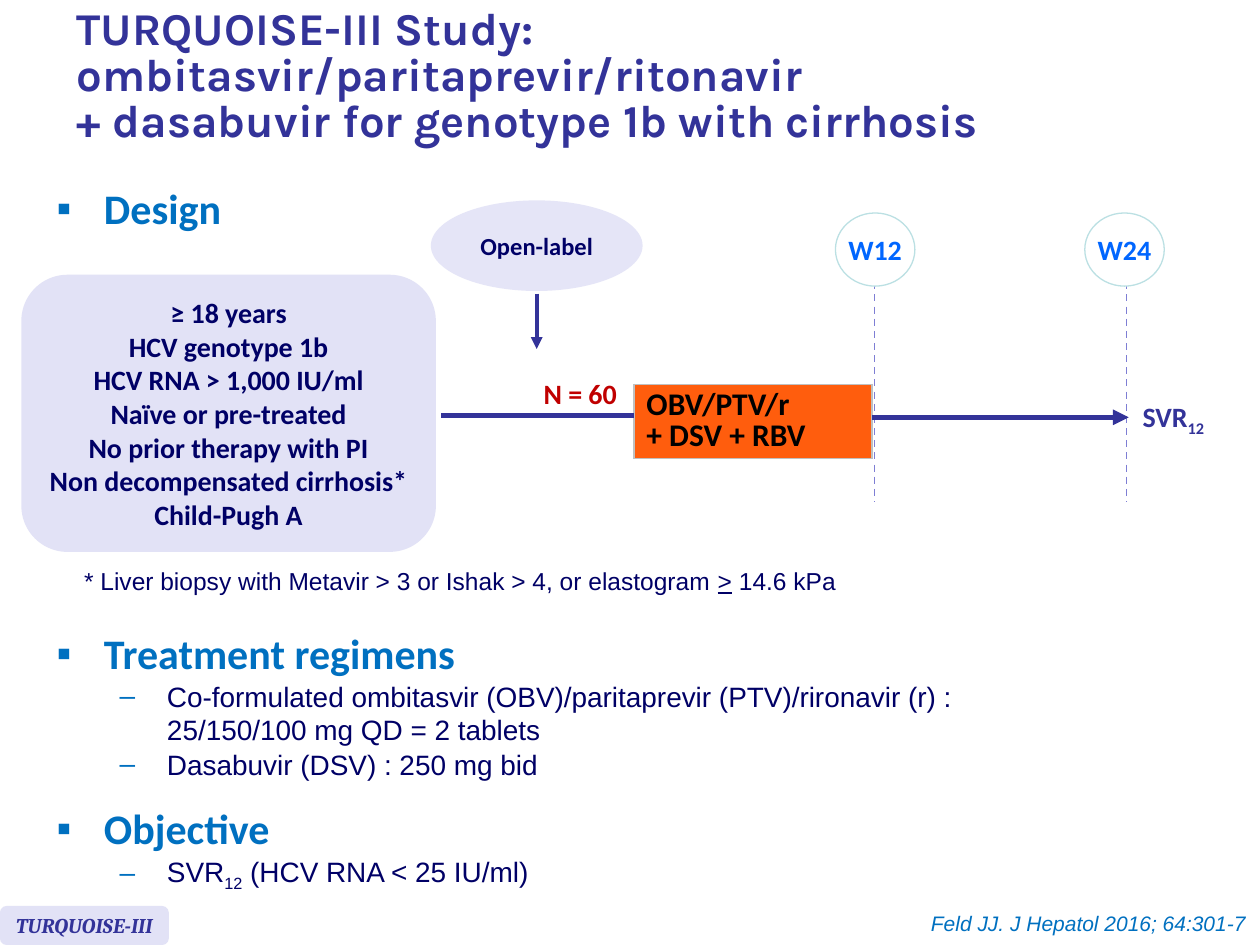
from lxml.etree import SubElement
from pptx import Presentation
from pptx.dml.color import RGBColor
from pptx.enum.dml import MSO_LINE
from pptx.enum.shapes import MSO_CONNECTOR, MSO_SHAPE
from pptx.enum.text import MSO_ANCHOR, MSO_AUTO_SIZE, PP_ALIGN
from pptx.oxml.ns import qn
from pptx.util import Pt

HEX = {
    "indigo": "333399", "navy": "000066", "blue": "0070C0", "week": "0066FF",
    "red": "C00000", "orange": "FF5D0D", "black": "000000", "white": "FFFFFF",
    "pale": "E2E2F6", "lilac": "E5E5F7", "dash": "7E7ED4", "aqua": "BBE0E3",
    "gray": "C0C0C0",
}
RGB = {name: RGBColor.from_string(code) for name, code in HEX.items()}
LEFT, MID, RIGHT = PP_ALIGN.LEFT, PP_ALIGN.CENTER, PP_ALIGN.RIGHT


def write(frame, *paras, font="Calibri", size=16, color="navy", bold=False,
          italic=False, align=LEFT, space=None, bullet=None, level=0):
    """Append paragraphs; each is a string or a list of (text, mark) runs."""
    for para in paras:
        p = frame.paragraphs[0]
        first = not p.text
        if not first:
            p = frame.add_paragraph()
        p.alignment = align
        p.level = level
        p.line_spacing = space
        p.space_before = Pt(0 if first or not bullet else 0.7)
        if bullet:
            props = p._p.get_or_add_pPr()
            props.set("marL", str(Pt(27 + 36 * level)))
            props.set("indent", str(Pt(-27)))
            tint = SubElement(props, qn("a:buClr"))
            SubElement(tint, qn("a:srgbClr"), val=HEX["blue"])
            SubElement(props, qn("a:buFont"), typeface="Arial")
            SubElement(props, qn("a:buChar"), char=bullet)
        for text, mark in [(para, None)] if isinstance(para, str) else para:
            for i, part in enumerate(text.split("\n")):
                if i:
                    p.add_line_break()
                run = p.add_run()
                run.text = part
                run.font.name, run.font.size = font, Pt(size)
                run.font.bold, run.font.italic = bold, italic
                run.font.color.rgb = RGB[color]
                if mark == "line":
                    run.font.underline = True
                elif mark == "sub":
                    run._r.get_or_add_rPr().set("baseline", "-25000")


deck = Presentation()
deck.slide_width, deck.slide_height = Pt(720), Pt(540)
slide = deck.slides.add_slide(deck.slide_layouts[4])
shapes = slide.shapes
holders = {h.placeholder_format.idx: h for h in slide.placeholders}

# Title
title = shapes.title
title.left, title.top, title.width, title.height = Pt(36.7), Pt(5.8), Pt(683.3), Pt(77)
frame = title.text_frame
frame.auto_size = MSO_AUTO_SIZE.NONE
frame.vertical_anchor = MSO_ANCHOR.MIDDLE
frame.margin_right = Pt(70)
write(frame, "TURQUOISE-III Study: ombitasvir/paritaprevir/ritonavir\n"
      "+ dasabuvir for genotype 1b with cirrhosis",
      font="Karla", size=26, color="indigo", bold=True, space=0.85)

# Lists
lists = [
    (1, 100.8, 142.6, 45.4, "Design", []),
    (2, 355, 700, 89.3, "Treatment regimens", [
        "Co-formulated ombitasvir (OBV)/paritaprevir (PTV)/rironavir (r) :\n"
        "25/150/100 mg QD = 2 tablets",
        "Dasabuvir (DSV) : 250 mg bid"]),
    (4, 455, 700, 64.8, "Objective", [
        [("SVR", None), ("12", "sub"), (" (HCV RNA < 25 IU/ml)", None)]]),
]
for idx, top, wide, high, head, items in lists:
    body = holders[idx]
    body.left, body.top, body.width, body.height = Pt(25.2), Pt(top), Pt(wide), Pt(high)
    frame = body.text_frame
    frame.auto_size = MSO_AUTO_SIZE.NONE
    frame.vertical_anchor = MSO_ANCHOR.TOP
    write(frame, head, size=24, color="blue", bold=True, bullet="▪")
    write(frame, *items, font="Arial", bullet="–", level=1)
spare = holders[3]._element
spare.getparent().remove(spare)

# Treatment arm
grid = shapes.add_table(1, 1, Pt(362.2), Pt(219.6), Pt(136), Pt(41.8)).table
grid.first_row = grid.horz_banding = False
cell = grid.cell(0, 0)
cell.vertical_anchor = MSO_ANCHOR.MIDDLE
write(cell.text_frame, "OBV/PTV/r\n+ DSV + RBV", size=18, color="black",
      bold=True, space=0.8)
for side in ("lnL", "lnR", "lnT", "lnB"):
    edge = SubElement(cell._tc.get_or_add_tcPr(), qn("a:" + side), w=str(Pt(1)))
    ink = SubElement(edge, qn("a:solidFill"))
    SubElement(ink, qn("a:srgbClr"), val=HEX["gray"])
cell.fill.solid()
cell.fill.fore_color.rgb = RGB["orange"]

# Lines and arrows: x1, y1, x2, y2, colour, width, arrow
lines = [
    (306.7, 167.8, 306.7, 199.4, "indigo", 2.25, True),
    (252, 237.6, 362.2, 237.6, "indigo", 3, False),
    (643.7, 161.3, 643.7, 287, "dash", 1, False),
    (499.7, 161.3, 499.7, 287, "dash", 1, False),
    (498.2, 238.5, 645, 238.5, "indigo", 3, True),
]
for x1, y1, x2, y2, color, wide, arrow in lines:
    link = shapes.add_connector(MSO_CONNECTOR.STRAIGHT, Pt(x1), Pt(y1), Pt(x2), Pt(y2))
    link.line.color.rgb = RGB[color]
    link.line.width = Pt(wide)
    if color == "dash":
        link.line.dash_style = MSO_LINE.DASH
    if arrow:
        SubElement(link.line._get_or_add_ln(), qn("a:tailEnd"), type="triangle")
    SubElement(link._element.spPr, qn("a:effectLst"))

# Filled shapes
OVAL, ROUND = MSO_SHAPE.OVAL, MSO_SHAPE.ROUNDED_RECTANGLE
bold = {"bold": True, "align": MID}
week = {**bold, "color": "week"}
tag = {**bold, "font": "Cambria", "size": 12, "color": "indigo", "italic": True}
needs = ["≥ 18 years", "HCV genotype 1b", "HCV RNA > 1,000 IU/ml",
         "Naïve or pre-treated", "No prior therapy with PI",
         "Non decompensated cirrhosis*", "Child-Pugh A"]
forms = [
    (OVAL, 246.2, 114.5, 121, 51.8, "lilac", None, ["Open-label"], {**bold, "size": 14}),
    (ROUND, 12.2, 157, 236.9, 158.4, "pale", None, needs, bold),
    (OVAL, 477.4, 121.7, 45.4, 41.8, "white", "aqua", ["W12"], week),
    (OVAL, 619.9, 121.7, 45.4, 41.8, "white", "aqua", ["W24"], week),
    (ROUND, 0, 517.7, 96.5, 22.3, "pale", None, ["TURQUOISE-III"], tag),
]
for kind, x, y, wide, high, fill, rim, paras, style in forms:
    form = shapes.add_shape(kind, Pt(x), Pt(y), Pt(wide), Pt(high))
    form.shadow.inherit = False
    form.fill.solid()
    form.fill.fore_color.rgb = RGB[fill]
    if rim:
        form.line.color.rgb = RGB[rim]
        form.line.width = Pt(0.75)
    else:
        form.line.fill.background()
    form.text_frame.word_wrap = False
    form.text_frame.vertical_anchor = MSO_ANCHOR.MIDDLE
    write(form.text_frame, *paras, **style)

# Labels and notes
note = [("* Liver biopsy with Metavir > 3 or Ishak > 4, or elastogram ", None),
        (">", "line"), (" 14.6 kPa", None)]
labels = [
    (41, 319.7, 515.5, 24.5, True, note, {"font": "Arial", "size": 14}),
    (303.1, 211.7, 56.9, 26.6, False, "N = 60", {**bold, "color": "red"}),
    (645.8, 224.6, 51.8, 26.6, False, [("SVR", None), ("12", "sub")],
     {"color": "indigo", "bold": True}),
    (523.4, 517, 195.8, 21.6, False, "Feld JJ. J Hepatol 2016; 64:301-7",
     {"font": "Arial", "size": 12, "color": "blue", "italic": True, "align": RIGHT}),
]
for x, y, wide, high, wrap, text, style in labels:
    frame = shapes.add_textbox(Pt(x), Pt(y), Pt(wide), Pt(high)).text_frame
    frame.word_wrap = wrap
    write(frame, text, **style)

deck.save("out.pptx")
